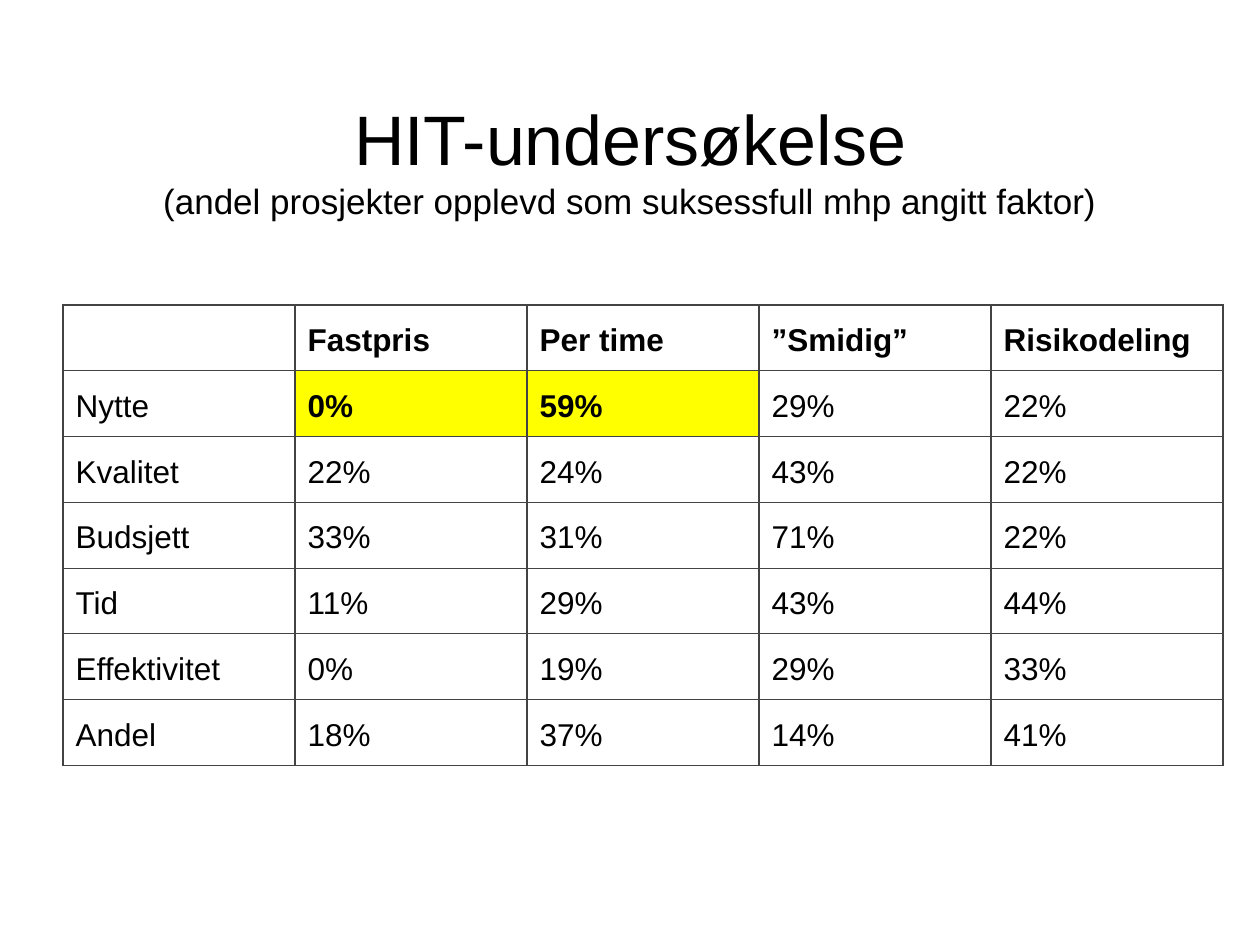
from pptx import Presentation
from pptx.dml.color import RGBColor
from pptx.enum.text import MSO_ANCHOR, MSO_AUTO_SIZE, PP_ALIGN
from pptx.oxml.ns import qn
from pptx.util import Pt
from lxml.etree import SubElement

BLACK = RGBColor(0x00, 0x00, 0x00)
YELLOW = RGBColor(0xFF, 0xFF, 0x00)
BORDER = RGBColor(0x43, 0x43, 0x43)
FONT = "Arial"
INSET = Pt(7.2)
COL_WIDTH, ROW_HEIGHT = Pt(132.6), Pt(37.5)

ROWS = [
    ["", "Fastpris", "Per time", "”Smidig”", "Risikodeling"],
    ["Nytte", "0%", "59%", "29%", "22%"],
    ["Kvalitet", "22%", "24%", "43%", "22%"],
    ["Budsjett", "33%", "31%", "71%", "22%"],
    ["Tid", "11%", "29%", "43%", "44%"],
    ["Effektivitet", "0%", "19%", "29%", "33%"],
    ["Andel", "18%", "37%", "14%", "41%"],
]
HIGHLIGHTED = {(1, 1), (1, 2)}


def set_font(font, size, bold=False):
    font.name, font.size, font.bold = FONT, Pt(size), bold
    font.color.rgb = BLACK


def set_insets(obj):
    obj.margin_left = obj.margin_right = INSET
    obj.margin_top = obj.margin_bottom = INSET


def add_title(slide, heading, subheading):
    sp = slide.shapes.title
    sp.left, sp.top, sp.width, sp.height = Pt(36), Pt(45.4), Pt(648), Pt(90)
    tf = sp.text_frame
    tf.word_wrap = True
    tf.auto_size = MSO_AUTO_SIZE.NONE
    tf.vertical_anchor = MSO_ANCHOR.MIDDLE
    set_insets(tf)
    p = tf.paragraphs[0]
    p.alignment = PP_ALIGN.CENTER
    r = p.add_run()
    r.text = heading
    set_font(r.font, 40)
    p.add_line_break()
    r = p.add_run()
    r.text = subheading
    set_font(r.font, 20)


def add_borders(cell):
    """Put the border lines ahead of the fill, as the schema requires."""
    tc_pr = cell._tc.get_or_add_tcPr()
    for i, side in enumerate(("a:lnL", "a:lnR", "a:lnT", "a:lnB")):
        ln = SubElement(tc_pr, qn(side), w=str(Pt(0.75)))
        fill = SubElement(ln, qn("a:solidFill"))
        SubElement(fill, qn("a:srgbClr"), val=str(BORDER))
        tc_pr.insert(i, ln)


def format_cell(cell, text, bold, highlighted):
    cell.text = text
    set_insets(cell)
    p = cell.text_frame.paragraphs[0]
    p.line_spacing = 1.15
    set_font(p.font, 18, bold)
    if highlighted:
        cell.fill.solid()
        cell.fill.fore_color.rgb = YELLOW
    else:
        cell.fill.background()
    add_borders(cell)


def add_results_table(slide):
    n_rows, n_cols = len(ROWS), len(ROWS[0])
    table = slide.shapes.add_table(n_rows, n_cols, Pt(36), Pt(174.3),
                                   n_cols * COL_WIDTH, n_rows * ROW_HEIGHT).table
    table.first_row = table.horz_banding = False
    for i, row in enumerate(ROWS):
        for j, text in enumerate(row):
            highlighted = (i, j) in HIGHLIGHTED
            format_cell(table.cell(i, j), text, i == 0 or highlighted, highlighted)


def main():
    prs = Presentation()
    prs.slide_width, prs.slide_height = Pt(720), Pt(540)
    slide = prs.slides.add_slide(prs.slide_layouts[5])
    add_title(slide, "HIT-undersøkelse",
              "(andel prosjekter opplevd som suksessfull mhp angitt faktor)")
    add_results_table(slide)
    prs.save("out.pptx")


if __name__ == "__main__":
    main()
